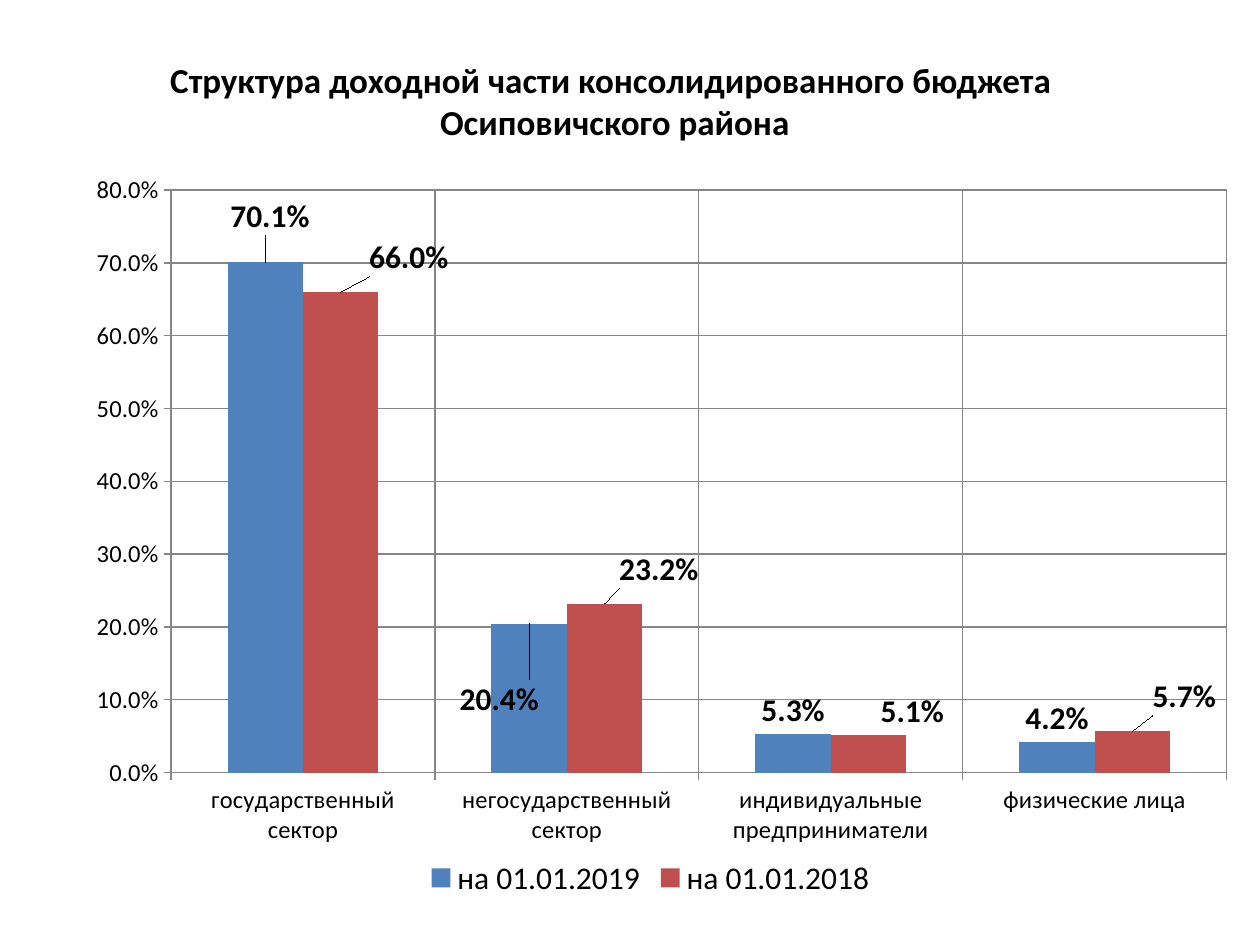
from lxml import etree
from pptx import Presentation
from pptx.chart.data import CategoryChartData
from pptx.dml.color import RGBColor
from pptx.enum import chart as ch, text
from pptx.oxml.ns import qn
from pptx.util import Pt

FONT = "Calibri"
BLACK, GRID = "000000", "868686"
SECTORS = ["государственный сектор", "негосударственный сектор",
           "индивидуальные предприниматели", "физические лица"]
# name, colour, shares, label shifts by point (fractions of the chart's size)
YEARS = [
    ("на 01.01.2019", "4F81BD", [0.701, 0.204, 0.053, 0.042],
     {0: (0.004, -0.03), 1: (-0.026, 0.134)}),
    ("на 01.01.2018", "C0504D", [0.66, 0.232, 0.051, 0.057],
     {0: (0.059, -0.014), 1: (0.047, -0.014), 2: (0.038, 0), 3: (0.045, -0.014)}),
]


def rgb(value):
    return RGBColor.from_string(value)


def style_font(font, size, bold=False):
    font.name = FONT
    font.size = Pt(size)
    font.bold = bold
    font.color.rgb = rgb(BLACK)


def manual_layout(parent, position, **values):
    """Insert a manual chart layout as the given child of parent."""
    for old in parent.findall(qn("c:layout")):
        parent.remove(old)
    layout = etree.Element(qn("c:layout"))
    manual = etree.SubElement(layout, qn("c:manualLayout"))
    for tag, value in values.items():
        etree.SubElement(manual, qn("c:" + tag)).set("val", str(value))
    parent.insert(position, layout)


def add_title(slide, left, top, width, height):
    title = slide.shapes.title
    title.left, title.top, title.width, title.height = map(Pt, (left, top, width, height))
    frame = title.text_frame
    frame.word_wrap = True
    frame.vertical_anchor = text.MSO_ANCHOR.MIDDLE
    heading = frame.paragraphs[0]
    heading.alignment = text.PP_ALIGN.CENTER
    first = heading.add_run()
    first.text = "Структура доходной части консолидированного бюджета "
    heading.add_line_break()
    second = heading.add_run()
    second.text = "Осиповичского района"
    for run in (first, second):
        style_font(run.font, 20, True)


def style_axis(axis):
    axis.has_major_gridlines = True
    axis.major_tick_mark = ch.XL_TICK_MARK.OUTSIDE
    style_font(axis.tick_labels.font, 14)
    for line in (axis.format.line, axis.major_gridlines.format.line):
        line.color.rgb = rgb(GRID)
        line.width = Pt(0.75)


def style_series(series, color, shifts):
    series.format.fill.solid()
    series.format.fill.fore_color.rgb = rgb(color)
    series.invert_if_negative = False
    labels = series.data_labels
    labels.show_value = True
    labels.number_format = "0.0%"
    labels.number_format_is_linked = False
    labels.position = ch.XL_LABEL_POSITION.OUTSIDE_END
    style_font(labels.font, 18, True)
    # Labels moved away from their bars
    for index, (x, y) in shifts.items():
        label = series.points[index].data_label
        style_font(label.font, 18, True)
        label.position = ch.XL_LABEL_POSITION.OUTSIDE_END
        for element in labels._element.findall(qn("c:dLbl")):
            if element.find(qn("c:idx")).get("val") == str(index):
                manual_layout(element, 1, x=x, y=y)


def add_budget_chart(slide, left, top, width, height):
    shares = CategoryChartData(number_format="0.0%")
    shares.categories = SECTORS
    for name, _, values, _ in YEARS:
        shares.add_series(name, values)
    chart = slide.shapes.add_chart(ch.XL_CHART_TYPE.COLUMN_CLUSTERED,
                                   *map(Pt, (left, top, width, height)), shares).chart
    chart.has_title = False
    style_font(chart.font, 18)

    # Plot area and bars
    plot = chart.plots[0]
    plot.gap_width = 150
    plot.vary_by_categories = False
    manual_layout(chart._chartSpace.chart.plotArea, 0, layoutTarget="inner",
                  xMode="edge", yMode="edge", x=0.084, y=0.034, w=0.916, h=0.789)
    for series, (_, color, _, shifts) in zip(plot.series, YEARS):
        style_series(series, color, shifts)

    # Axes
    for axis in (chart.category_axis, chart.value_axis):
        style_axis(axis)
    scale = chart.value_axis
    scale.minimum_scale, scale.maximum_scale, scale.major_unit = 0, 0.8, 0.1
    scale.tick_labels.number_format = "0.0%"
    scale.tick_labels.number_format_is_linked = False

    # Legend
    chart.has_legend = True
    chart.legend.position = ch.XL_LEGEND_POSITION.BOTTOM
    chart.legend.include_in_layout = False
    style_font(chart.legend.font, 18)


def main():
    deck = Presentation()
    deck.slide_width, deck.slide_height = Pt(720), Pt(540)
    slide = deck.slides.add_slide(deck.slide_layouts[5])
    add_title(slide, 36.7, 20.9, 629.3, 73.4)
    add_budget_chart(slide, 42.5, 94.3, 658.8, 421.9)
    deck.save("out.pptx")


if __name__ == "__main__":
    main()
